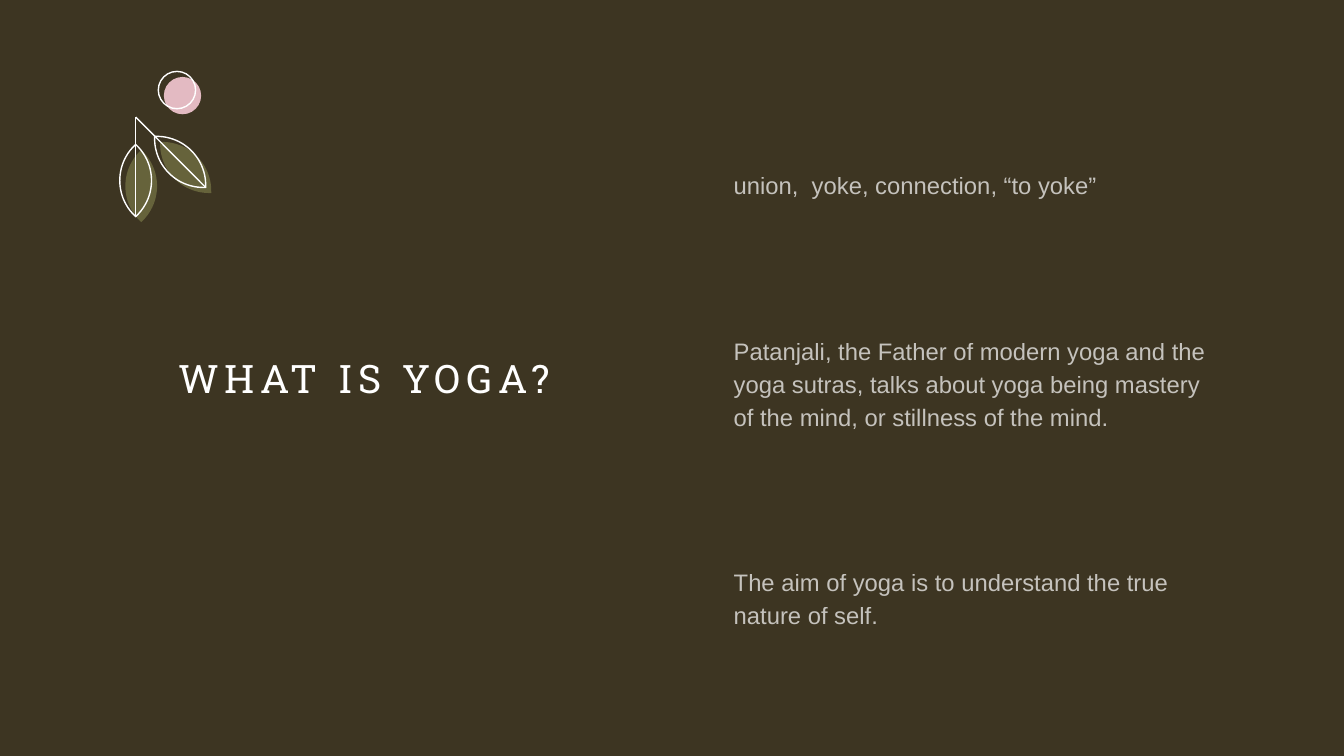
from math import cos, hypot, pi, sin, sqrt

from lxml.etree import SubElement
from pptx import Presentation
from pptx.dml.color import RGBColor
from pptx.enum.shapes import MSO_CONNECTOR as Link, MSO_SHAPE as Kind
from pptx.enum.text import MSO_ANCHOR as Anchor, MSO_AUTO_SIZE as Fit, PP_ALIGN as Align
from pptx.oxml.ns import qn
from pptx.util import Cm, Pt

DARK = RGBColor(0x3D, 0x35, 0x22)
WHITE = RGBColor(0xFF, 0xFF, 0xFF)
OLIVE = RGBColor(0xA4, 0xA9, 0x62)
PINK = RGBColor(0xE3, 0xBA, 0xC2)

POINTS = [
    "union,  yoke, connection, “to yoke”",
    "Patanjali, the Father of modern yoga and the yoga sutras, talks about yoga "
    "being mastery of the mind, or stillness of the mind.",
    "The aim of yoga is to understand the true nature of self.",
]


def fade(fill, share):
    color = next(fill._xPr.iter(qn("a:srgbClr")))
    SubElement(color, qn("a:alpha")).set("val", str(share * 1000))


def paint(shape, color=None):
    shape.shadow.inherit = False
    if color is None:
        shape.fill.background()
        shape.line.color.rgb = WHITE
        shape.line.width = Pt(1)
    else:
        shape.fill.solid()
        shape.fill.fore_color.rgb = color
        shape.line.fill.background()


def add_leaf(group, x, y, turn, color=None):
    half, bulge, steps = 0.91, 0.4, 24
    radius = hypot(half, bulge) ** 2 / (2 * bulge)
    spots = []
    for side in (1, -1):
        for step in range(steps):
            along = side * half * (2 * step / steps - 1)
            off = side * (sqrt(radius ** 2 - along ** 2) - radius + bulge)
            spots.append((Cm(x + along * cos(turn) - off * sin(turn)),
                          Cm(y + along * sin(turn) + off * cos(turn))))
    pen = group.shapes.build_freeform(*spots[0])
    pen.add_line_segments(spots[1:], close=True)
    leaf = pen.convert_to_shape()
    paint(leaf, color)
    if color is not None:
        fade(leaf.fill, 40)


def add_stem(group, start, end):
    stem = group.shapes.add_connector(Link.STRAIGHT, *map(Cm, start + end))
    stem.line.color.rgb = WHITE
    stem.line.width = Pt(1)
    SubElement(stem._element.spPr, qn("a:effectLst"))


def add_sprig(slide, left, top):
    group = slide.shapes.add_group_shape()
    leaves = [(left + 1.52, top + 2.28, pi / 4), (left + 0.4, top + 2.75, pi / 2)]
    shift = 0.14
    for x, y, turn in leaves:
        add_leaf(group, x + shift, y + shift, turn, OLIVE)
    for x, y, turn in leaves:
        add_leaf(group, x, y, turn)
    root = (left + 0.4, top + 1.15)
    for end in ((left + 0.4, top + 3.66), (left + 2.16, top + 2.92)):
        add_stem(group, root, end)
    for move, color in ((shift, PINK), (0, None)):
        bud = group.shapes.add_shape(
            Kind.OVAL, Cm(left + 0.97 + move), Cm(top + move), Cm(0.94), Cm(0.94))
        paint(bud, color)


def place(holder, left, top, width, height, anchor):
    holder.left, holder.top = Cm(left), Cm(top)
    holder.width, holder.height = Cm(width), Cm(height)
    frame = holder.text_frame
    frame.margin_left = frame.margin_right = frame.margin_top = frame.margin_bottom = 0
    frame.word_wrap = True
    frame.auto_size = Fit.NONE
    frame.vertical_anchor = anchor
    return frame


def style(para, name, size):
    for run in para.runs:
        run.font.name = name
        run.font.size = Pt(size)
        run.font.color.rgb = WHITE


def add_title(slide, left, top, width, height):
    frame = place(slide.shapes.title, left, top, width, height, Anchor.MIDDLE)
    frame.text = "WHAT IS YOGA?"
    para = frame.paragraphs[0]
    para.alignment = Align.CENTER
    para.space_after = Pt(6)
    style(para, "Roboto Slab", 28)
    para.runs[0].font._element.set("spc", "400")


def add_body(slide, left, top, width, height):
    frame = place(slide.placeholders[1], left, top, width, height, Anchor.TOP)
    frame.margin_top = Cm(1.2)
    frame.text = "\n".join(POINTS)
    for para in frame.paragraphs:
        para.line_spacing = 1.15
        para.space_before = Pt(0)
        para.space_after = Pt(95)
        props = para._p.get_or_add_pPr()
        props.set("marL", "0")
        props.set("indent", "0")
        SubElement(props, qn("a:buNone"))
        style(para, "Arial", 17)
        for run in para.runs:
            fade(run.font.fill, 70)


def main():
    deck = Presentation()
    deck.slide_width, deck.slide_height = Cm(33.87), Cm(19.05)
    slide = deck.slides.add_slide(deck.slide_layouts[1])
    slide.background.fill.solid()
    slide.background.fill.fore_color.rgb = DARK
    add_title(slide, 3, 6.25, 12.37, 6.53)
    add_sprig(slide, 3.02, 1.8)
    add_body(slide, 18.49, 3, 12.37, 13.03)
    deck.save("out.pptx")


if __name__ == "__main__":
    main()
